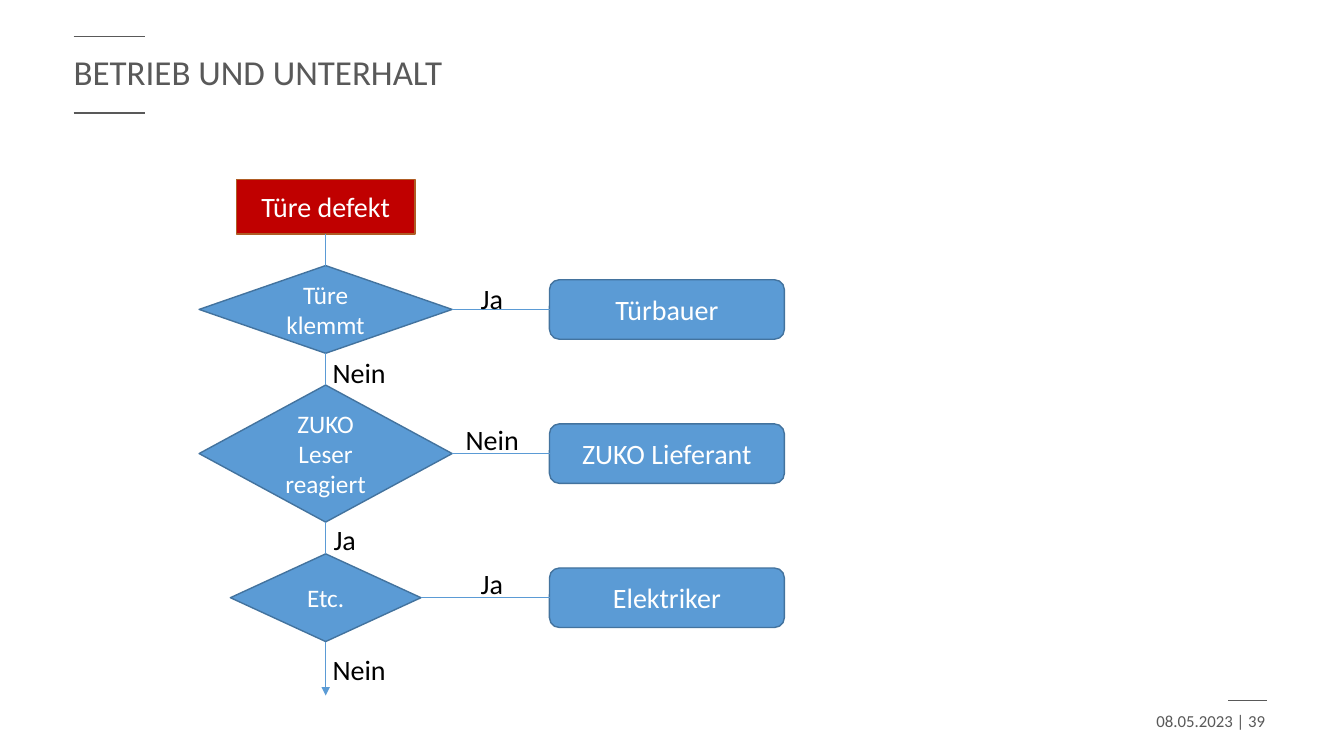
from lxml import etree
from pptx import Presentation
from pptx.dml.color import RGBColor
from pptx.enum.shapes import MSO_CONNECTOR, MSO_SHAPE
from pptx.enum.text import MSO_ANCHOR, MSO_AUTO_SIZE, PP_ALIGN
from pptx.oxml.ns import qn
from pptx.util import Inches, Pt

STRAIGHT = MSO_CONNECTOR.STRAIGHT
PROCESS = MSO_SHAPE.FLOWCHART_PROCESS
DECISION = MSO_SHAPE.FLOWCHART_DECISION
OUTCOME = MSO_SHAPE.FLOWCHART_ALTERNATE_PROCESS
LEFT, CENTER, RIGHT = PP_ALIGN.LEFT, PP_ALIGN.CENTER, PP_ALIGN.RIGHT
TOP, MIDDLE = MSO_ANCHOR.TOP, MSO_ANCHOR.MIDDLE
NO_AUTOFIT = MSO_AUTO_SIZE.NONE

CELL = 0.1
TITLE_ONLY = 5
SPINE = 32.3
FIRST_ROW = 30.7
ROW_STEP = 14.3
START_ROW = 20.5
START_HEIGHT = 5.4
OUTCOME_LEFT, OUTCOME_WIDTH, OUTCOME_HEIGHT = 54.5, 23.3, 5.9
LABEL_WIDTHS = {"Ja": 4.3, "Nein": 7.3}
LABEL_HEIGHT = 4.4

DECISIONS = [
    ("Türe\nklemmt", 25.1, 8.7, "Türbauer"),
    ("ZUKO Leser reagiert", 25.1, 13.6, "ZUKO Lieferant"),
    ("Etc.", 18.9, 8.7, "Elektriker"),
]
LABELS = [
    ("Ja", 46.7, 27.4),
    ("Nein", 32, 34.8),
    ("Nein", 45.2, 41.4),
    ("Ja", 32.1, 51.3),
    ("Ja", 46.7, 55.7),
    ("Nein", 32, 64.2),
]


def color(value):
    return RGBColor.from_string(value)


def grid(*cells):
    return [Inches(cell * CELL) for cell in cells]


def write_text(frame, text, *, size, fill, font, align=LEFT, anchor=TOP, wrap=True, spacing=None):
    frame.text = text
    frame.auto_size = NO_AUTOFIT
    frame.word_wrap = wrap
    frame.vertical_anchor = anchor
    for paragraph in frame.paragraphs:
        paragraph.alignment = align
        paragraph.line_spacing = spacing
        paragraph.font.name = font
        paragraph.font.size = Pt(size)
        paragraph.font.color.rgb = color(fill)


class FlowSlide:
    font = "Calibri"
    gray, black, white = "595959", "000000", "FFFFFF"
    blue, blue_edge = "5B9BD5", "43739E"
    red, red_edge = "C00000", "AF5C24"

    def __init__(self, presentation):
        self.slide = presentation.slides.add_slide(presentation.slide_layouts[TITLE_ONLY])

    def title(self, text, left, top, width, height):
        shape = self.slide.shapes.title
        shape.left, shape.top, shape.width, shape.height = grid(left, top, width, height)
        write_text(shape.text_frame, text, size=25, fill=self.gray, font=self.font,
                   anchor=MIDDLE, spacing=0.9)

    def text(self, text, left, top, width, height, **style):
        shape = self.slide.shapes.add_textbox(*grid(left, top, width, height))
        write_text(shape.text_frame, text, font=self.font, **style)

    def node(self, kind, text, left, center, width, height, size=20, fill=blue, edge=blue_edge):
        shape = self.slide.shapes.add_shape(
            kind, *grid(left, center - height / 2, width, height))
        shape.shadow.inherit = False
        shape.fill.solid()
        shape.fill.fore_color.rgb = color(fill)
        shape.line.color.rgb = color(edge)
        shape.line.width = Pt(1)
        write_text(shape.text_frame, text, size=size, fill=self.white, font=self.font,
                   align=CENTER, anchor=MIDDLE)

    def line(self, start, end, stroke=blue, weight=0.5, arrow=False):
        connector = self.slide.shapes.add_connector(STRAIGHT, *grid(*start, *end))
        connector.line.color.rgb = color(stroke)
        connector.line.width = Pt(weight)
        if arrow:
            etree.SubElement(connector.line._get_or_add_ln(), qn("a:tailEnd"), type="triangle")
        etree.SubElement(connector._element.spPr, qn("a:effectLst"))

    def rule(self, left, top, width):
        self.line((left, top), (left + width, top), stroke=self.gray, weight=1)


def main():
    presentation = Presentation()
    presentation.slide_width, presentation.slide_height = Inches(13.33), Inches(7.5)
    page = FlowSlide(presentation)

    page.rule(121.8, 69.5, 3.9)
    page.text("08.05.2023 | 39", 96.5, 69.5, 30, 4, size=12, fill=page.gray,
              align=RIGHT, anchor=MIDDLE)
    for top in (3.6, 11.2):
        page.rule(7.3, top, 7.1)
    page.title("BETRIEB UND UNTERHALT", 6.3, 3.6, 100.1, 7.6)

    page.node(PROCESS, "Türe defekt", SPINE - 8.85, START_ROW, 17.7, START_HEIGHT,
              fill=page.red, edge=page.red_edge)
    bottom = START_ROW + START_HEIGHT / 2
    for index, (question, width, height, outcome) in enumerate(DECISIONS):
        center = FIRST_ROW + index * ROW_STEP
        page.node(DECISION, question, SPINE - width / 2, center, width, height, size=18)
        page.node(OUTCOME, outcome, OUTCOME_LEFT, center, OUTCOME_WIDTH, OUTCOME_HEIGHT)
        page.line((SPINE, bottom), (SPINE, center - height / 2))
        page.line((SPINE + width / 2, center), (OUTCOME_LEFT, center))
        bottom = center + height / 2
    page.line((SPINE, bottom), (SPINE, 69), arrow=True)

    for answer, left, top in LABELS:
        page.text(answer, left, top, LABEL_WIDTHS[answer], LABEL_HEIGHT, size=20,
                  fill=page.black, wrap=False)

    presentation.save("out.pptx")


if __name__ == "__main__":
    main()
